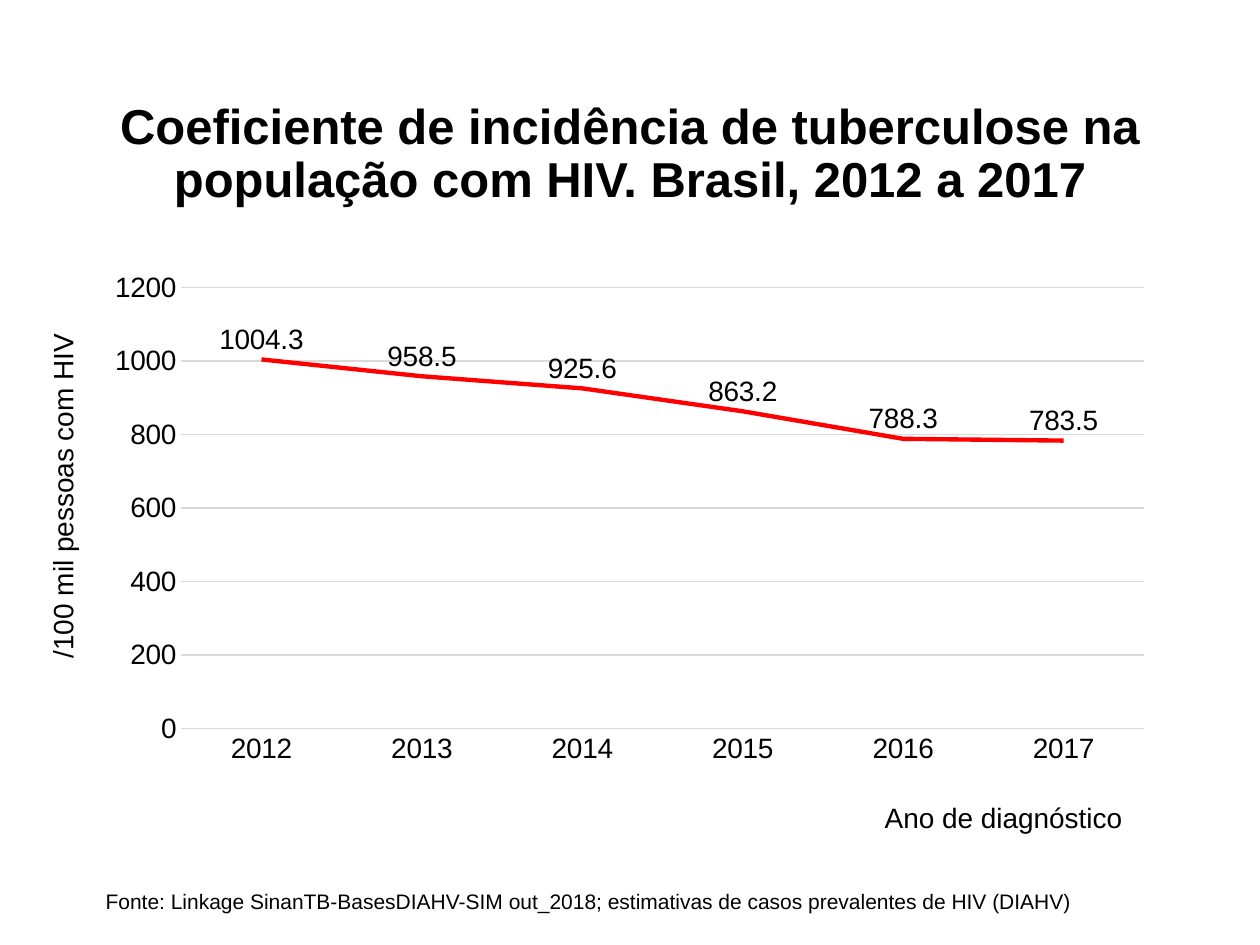
from dataclasses import dataclass

from lxml import etree
from pptx import Presentation
from pptx import util as u
from pptx.chart.data import CategoryChartData
from pptx.dml.color import RGBColor
from pptx.enum import chart as ch
from pptx.enum import text

FONT = "Arial"
BLACK, RED, GREY = "000000", "FF0000", "D9D9D9"
INCIDENCE = {
    "2012": 1004.3, "2013": 958.5, "2014": 925.6,
    "2015": 863.2, "2016": 788.3, "2017": 783.5,
}


@dataclass
class Label:
    """A text box; lengths in centimetres, size in points."""
    words: str
    left: float
    top: float
    width: float
    height: float
    size: int = 16
    bold: bool = False
    rotation: int = 0
    centred: bool = True
    wrap: bool = True


LABELS = [
    Label("Coeficiente de incidência de tuberculose na população com HIV. "
          "Brasil, 2012 a 2017", 0.25, 1.93, 24.9, 3.18, size=28, bold=True),
    Label("Fonte: Linkage SinanTB-BasesDIAHV-SIM out_2018; estimativas de casos "
          "prevalentes de HIV (DIAHV)", 1.88, 17.78, 20.14, 0.77,
          size=12, centred=False, wrap=False),
    Label("/100 mil pessoas com HIV", -3.3, 9, 10.34, 2, rotation=270),
    Label("Ano de diagnóstico", 15.06, 16.1, 10.34, 2),
]


def colour(value: str) -> RGBColor:
    return RGBColor.from_string(value)


def style_font(font, size: int, bold: bool = False) -> None:
    font.name = FONT
    font.size = u.Pt(size)
    font.bold = bold
    font.color.rgb = colour(BLACK)


def style_line(line, value: str, width: float) -> None:
    line.color.rgb = colour(value)
    line.width = u.Pt(width)


def add_label(s, label: Label) -> None:
    sp = s.shapes.add_textbox(u.Cm(label.left), u.Cm(label.top),
                              u.Cm(label.width), u.Cm(label.height))
    sp.rotation = label.rotation
    tf = sp.text_frame
    tf.word_wrap = label.wrap
    p = tf.paragraphs[0]
    if label.centred:
        p.alignment = text.PP_ALIGN.CENTER
        p.line_spacing = 0.9
    r = p.add_run()
    r.text = label.words
    style_font(r.font, label.size, label.bold)


def fix_plot_area(chart, **fractions: float) -> None:
    """Place the inner plot area by fractions of the chart's size."""
    plot_area = chart.plots[0]._element.getparent()
    ns = plot_area.nsmap["c"]
    for old in plot_area.findall(f"{{{ns}}}layout"):
        plot_area.remove(old)
    layout = etree.Element(f"{{{ns}}}layout")
    manual = etree.SubElement(layout, f"{{{ns}}}manualLayout")
    settings = {"layoutTarget": "inner", "xMode": "edge", "yMode": "edge", **fractions}
    for tag, value in settings.items():
        etree.SubElement(manual, f"{{{ns}}}{tag}").set("val", str(value))
    plot_area.insert(0, layout)


def add_incidence_chart(s) -> None:
    data = CategoryChartData(number_format="0.0")
    data.categories = list(INCIDENCE)
    data.add_series("Series 1", list(INCIDENCE.values()))
    chart = s.shapes.add_chart(ch.XL_CHART_TYPE.LINE, u.Cm(1.93), u.Cm(5.28),
                               u.Cm(21.56), u.Cm(10.34), data).chart
    chart.has_legend = False
    chart.has_title = False
    style_font(chart.font, 16)
    fix_plot_area(chart, x=0.08, y=0.05, w=0.9, h=0.86)

    # Axes
    for axis in (chart.category_axis, chart.value_axis):
        axis.major_tick_mark = axis.minor_tick_mark = ch.XL_TICK_MARK.NONE
        style_font(axis.tick_labels.font, 16)
    style_line(chart.category_axis.format.line, GREY, 0.75)
    values = chart.value_axis
    values.minimum_scale, values.maximum_scale, values.major_unit = 0, 1200, 200
    values.format.line.fill.background()
    values.tick_labels.number_format = "0"
    values.tick_labels.number_format_is_linked = False
    style_line(values.major_gridlines.format.line, GREY, 0.75)

    # Line and its labels
    plot = chart.plots[0]
    plot.vary_by_categories = False
    series = plot.series[0]
    series.smooth = False
    series.marker.style = ch.XL_MARKER_STYLE.NONE
    style_line(series.format.line, RED, 2.5)
    labels = series.data_labels
    labels.show_value = True
    labels.position = ch.XL_LABEL_POSITION.ABOVE
    labels.number_format = "0.0"
    labels.number_format_is_linked = False
    style_font(labels.font, 16)


def main() -> None:
    prs = Presentation()
    prs.slide_width, prs.slide_height = u.Cm(25.4), u.Cm(19.05)
    s = prs.slides.add_slide(prs.slide_layouts[6])
    add_incidence_chart(s)
    for label in LABELS:
        add_label(s, label)
    prs.save("out.pptx")


if __name__ == "__main__":
    main()
